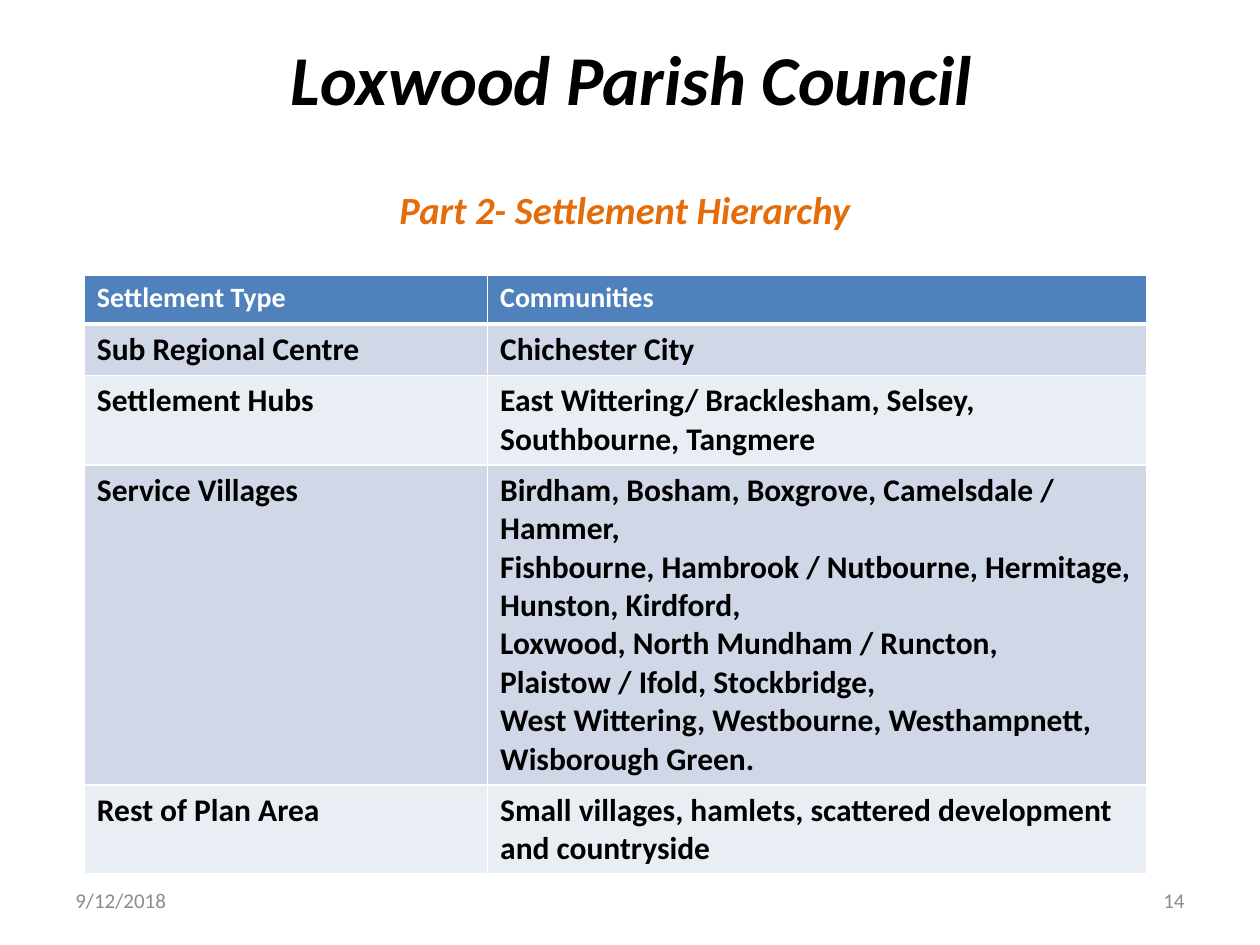
from dataclasses import dataclass

from lxml import etree
from pptx import Presentation, util as u
from pptx.dml.color import RGBColor
from pptx.enum import text as t
from pptx.oxml.ns import qn


@dataclass(frozen=True)
class Theme:
    font: str = "Calibri"
    black: str = "000000"
    white: str = "FFFFFF"
    accent: str = "E46C0A"
    muted: str = "8C8C8C"
    header: str = "4F81BD"
    bands: tuple[str, str] = ("D0D8E8", "E9EDF4")
    title_size: int = 40
    subtitle_size: int = 22
    header_size: int = 16
    cell_size: int = 18
    footer_size: int = 12
    rule: int = 1
    header_rule: int = 3


@dataclass(frozen=True)
class Area:
    left: float
    top: float
    width: float
    height: float

    def lengths(self) -> tuple:
        return tuple(u.Cm(n) for n in (self.left, self.top, self.width, self.height))


@dataclass(frozen=True)
class Settlement:
    kind: str
    communities: str
    height: float


THEME = Theme()
TITLE = Area(1.3, -0.03, 22.86, 3.18)
BODY = Area(1.09, 3.73, 23.01, 13.21)
DATE = Area(1.27, 17.65, 5.92, 1.01)
NUMBER = Area(18.21, 17.65, 5.92, 1.01)
TABLE_LEFT, TABLE_TOP = 1.7, 5.54
COLUMN_WIDTHS = (8.13, 13.28)
ROWS = (
    Settlement("Settlement Type", "Communities", 0.99),
    Settlement("Sub Regional Centre", "Chichester City", 1.04),
    Settlement("Settlement Hubs",
               "East Wittering/ Bracklesham, Selsey, Southbourne, Tangmere", 1.8),
    Settlement("Service Villages",
               "Birdham, Bosham, Boxgrove, Camelsdale / Hammer,\n"
               "Fishbourne, Hambrook / Nutbourne, Hermitage, Hunston, Kirdford,\n"
               "Loxwood, North Mundham / Runcton, Plaistow / Ifold, Stockbridge,\n"
               "West Wittering, Westbourne, Westhampnett, Wisborough Green.", 6.45),
    Settlement("Rest of Plan Area",
               "Small villages, hamlets, scattered development and countryside", 1.8),
)


def write(frame, words: str, *, size: int, color: str, bold: bool = False,
          italic: bool = False, align=t.PP_ALIGN.LEFT, spacing=None) -> None:
    """Fill a text frame, one paragraph for each line of words."""
    frame.word_wrap = True
    for index, line in enumerate(words.split("\n")):
        para = frame.add_paragraph() if index else frame.paragraphs[0]
        para.alignment = align
        para.line_spacing = spacing
        span = para.add_run()
        span.text = line
        span.font.name = THEME.font
        span.font.size = u.Pt(size)
        span.font.bold = bold
        span.font.italic = italic
        span.font.color.rgb = RGBColor.from_string(color)


def place(shape, area: Area) -> None:
    shape.left, shape.top, shape.width, shape.height = area.lengths()


def remove_bullet(para) -> None:
    properties = para._p.get_or_add_pPr()
    properties.set("marL", "0")
    properties.set("indent", "0")
    etree.SubElement(properties, qn("a:buNone"))


def add_headings(page) -> None:
    title, body = page.shapes.title, page.placeholders[1]
    place(title, TITLE)
    place(body, BODY)
    for shape in (title, body):
        shape.text_frame.auto_size = t.MSO_AUTO_SIZE.NONE
    title.text_frame.vertical_anchor = t.MSO_ANCHOR.MIDDLE
    write(title.text_frame, "Loxwood Parish Council", size=THEME.title_size,
          color=THEME.black, bold=True, italic=True, align=t.PP_ALIGN.CENTER)
    write(body.text_frame, "Part 2- Settlement Hierarchy", size=THEME.subtitle_size,
          color=THEME.accent, bold=True, italic=True, align=t.PP_ALIGN.CENTER,
          spacing=0.9)
    remove_bullet(body.text_frame.paragraphs[0])


def add_footer(page, words: str, area: Area, align) -> None:
    box = page.shapes.add_textbox(*area.lengths())
    box.text_frame.vertical_anchor = t.MSO_ANCHOR.MIDDLE
    write(box.text_frame, words, size=THEME.footer_size, color=THEME.muted, align=align)


def set_borders(cell, top: int, bottom: int) -> None:
    properties = cell._tc.get_or_add_tcPr()
    widths = {"lnL": THEME.rule, "lnR": THEME.rule, "lnT": top, "lnB": bottom}
    for side, width in widths.items():
        line = etree.SubElement(properties, qn(f"a:{side}"), w=str(u.Pt(width)))
        fill = etree.SubElement(line, qn("a:solidFill"))
        etree.SubElement(fill, qn("a:srgbClr"), val=THEME.white)


def add_settlement_table(page) -> None:
    area = Area(TABLE_LEFT, TABLE_TOP, sum(COLUMN_WIDTHS), sum(r.height for r in ROWS))
    table = page.shapes.add_table(len(ROWS), len(COLUMN_WIDTHS), *area.lengths()).table
    for column, width in zip(table.columns, COLUMN_WIDTHS):
        column.width = u.Cm(width)
    for index, settlement in enumerate(ROWS):
        table.rows[index].height = u.Cm(settlement.height)
        is_header = index == 0
        fill = THEME.header if is_header else THEME.bands[(index - 1) % 2]
        for column, words in enumerate((settlement.kind, settlement.communities)):
            cell = table.cell(index, column)
            set_borders(cell, top=THEME.header_rule if index == 1 else THEME.rule,
                        bottom=THEME.header_rule if is_header else THEME.rule)
            cell.fill.solid()
            cell.fill.fore_color.rgb = RGBColor.from_string(fill)
            write(cell.text_frame, words, bold=True,
                  size=THEME.header_size if is_header else THEME.cell_size,
                  color=THEME.white if is_header else THEME.black)


def main() -> None:
    deck = Presentation()
    deck.slide_width, deck.slide_height = u.Cm(25.4), u.Cm(19.05)
    page = deck.slides.add_slide(deck.slide_layouts.get_by_name("Title and Content"))
    add_headings(page)
    add_footer(page, "9/12/2018", DATE, t.PP_ALIGN.LEFT)
    add_footer(page, "14", NUMBER, t.PP_ALIGN.RIGHT)
    add_settlement_table(page)
    deck.save("out.pptx")


if __name__ == "__main__":
    main()
